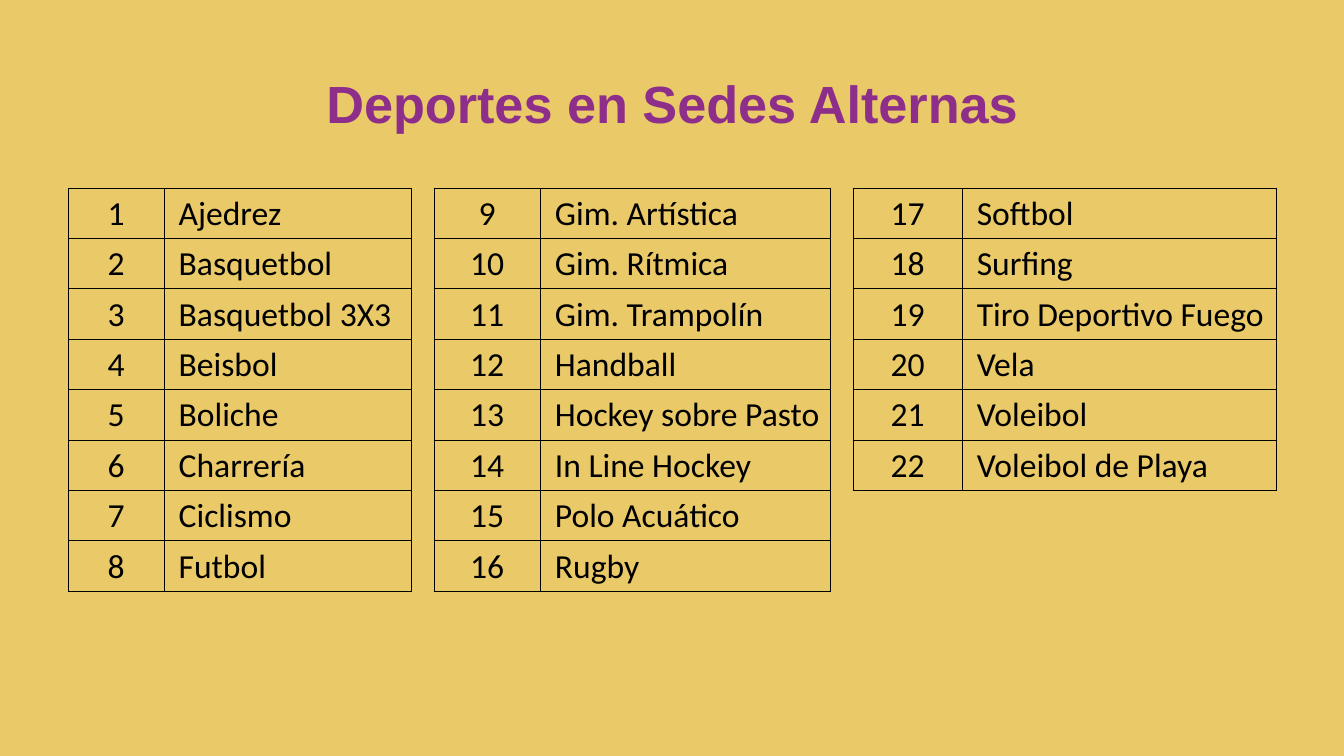
from lxml import etree
from pptx import Presentation
from pptx import util as u
from pptx.dml.color import RGBColor
from pptx.enum import text
from pptx.oxml.ns import qn

BACKGROUND = "EAC968"
PURPLE = "8D2F8A"
BLACK = "000000"
NO_TABLE_STYLE = "{2D5ABB26-0587-4C30-8999-92F81FD0307C}"
SIDES = {"lnL": (0, -1), "lnR": (0, 1), "lnT": (-1, 0), "lnB": (1, 0)}
ROWS = 8
COLUMN_WIDTHS = [0.71, 1.84, 0.17, 0.79, 2.16, 0.17, 0.81, 2.34]
SPORTS = [
    "Ajedrez", "Basquetbol", "Basquetbol 3X3", "Beisbol",
    "Boliche", "Charrería", "Ciclismo", "Futbol",
    "Gim. Artística", "Gim. Rítmica", "Gim. Trampolín", "Handball",
    "Hockey sobre Pasto", "In Line Hockey", "Polo Acuático", "Rugby",
    "Softbol", "Surfing", "Tiro Deportivo Fuego", "Vela",
    "Voleibol", "Voleibol de Playa",
]


def rgb(color):
    return RGBColor.from_string(color)


def set_font(p, name, size, color, bold=False):
    p.font.name = name
    p.font.size = u.Pt(size)
    p.font.bold = bold
    p.font.color.rgb = rgb(color)


def add_title(s, title):
    sp = s.shapes.add_textbox(u.Inches(0.5), u.Inches(0.29), u.Inches(9), u.Inches(0.94))
    tf = sp.text_frame
    tf.word_wrap = True
    tf.vertical_anchor = text.MSO_ANCHOR.MIDDLE
    p = tf.paragraphs[0]
    p.text = title
    p.alignment = text.PP_ALIGN.CENTER
    set_font(p, "Arial", 28, PURPLE, bold=True)


def add_border(cell, position, side, visible):
    ln = etree.Element(qn(f"a:{side}"), w=str(u.Pt(0.5)))
    if visible:
        fill = etree.SubElement(ln, qn("a:solidFill"))
        etree.SubElement(fill, qn("a:srgbClr"), val=BLACK)
    else:
        etree.SubElement(ln, qn("a:noFill"))
    cell._tc.get_or_add_tcPr().insert(position, ln)


def format_cell(cell):
    cell.fill.background()
    cell.vertical_anchor = text.MSO_ANCHOR.MIDDLE
    cell.margin_left = cell.margin_right = cell.margin_top = u.Inches(0.01)
    cell.margin_bottom = 0


def write_cell(cell, value, centered):
    p = cell.text_frame.paragraphs[0]
    p.text = value
    if centered:
        p.alignment = text.PP_ALIGN.CENTER
    else:
        pPr = p._p.get_or_add_pPr()
        pPr.set("marL", "0")
        pPr.set("indent", str(u.Inches(0.1)))
    set_font(p, "Calibri", 18, BLACK)


def place_sports():
    entries = {}
    for i, sport in enumerate(SPORTS):
        group, row = divmod(i, ROWS)
        entries[row, 3 * group] = str(i + 1)
        entries[row, 3 * group + 1] = sport
    return entries


def add_sports_table(s):
    table = s.shapes.add_table(
        ROWS, len(COLUMN_WIDTHS), u.Inches(0.51), u.Inches(1.4), u.Inches(8.99), u.Inches(3)
    ).table
    table.first_row = table.horz_banding = False
    table._tbl.tblPr.find(qn("a:tableStyleId")).text = NO_TABLE_STYLE
    for column, width in zip(table.columns, COLUMN_WIDTHS):
        column.width = u.Inches(width)
    entries = place_sports()
    for r in range(ROWS):
        for c in range(len(COLUMN_WIDTHS)):
            cell = table.cell(r, c)
            format_cell(cell)
            if (r, c) in entries:
                write_cell(cell, entries[r, c], centered=c % 3 == 0)
            for position, (side, (dr, dc)) in enumerate(SIDES.items()):
                visible = (r, c) in entries or (r + dr, c + dc) in entries
                add_border(cell, position, side, visible)


def main():
    prs = Presentation()
    prs.slide_width = u.Inches(10)
    prs.slide_height = u.Inches(10) * 9 // 16
    s = prs.slides.add_slide(prs.slide_layouts[6])
    s.background.fill.solid()
    s.background.fill.fore_color.rgb = rgb(BACKGROUND)
    add_title(s, "Deportes en Sedes Alternas")
    add_sports_table(s)
    prs.save("out.pptx")


if __name__ == "__main__":
    main()
